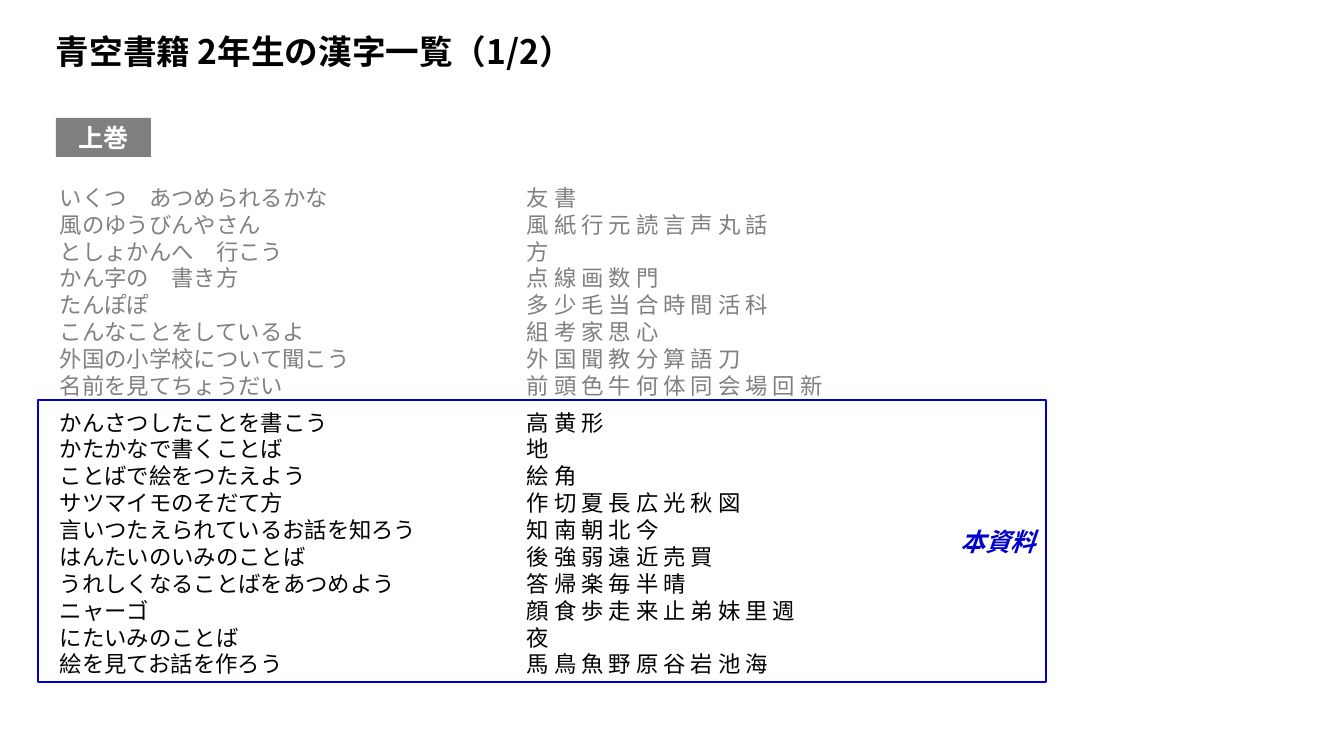
from pptx import Presentation
from pptx.dml.color import RGBColor
from pptx.enum.shapes import MSO_SHAPE as SHAPE
from pptx.enum.text import MSO_ANCHOR as ANCHOR, PP_ALIGN as ALIGN
from pptx.oxml.ns import qn
from pptx.util import Pt
from lxml.etree import SubElement

FONT = "Noto Sans CJK JP"
BLACK = RGBColor(0x00, 0x00, 0x00)
WHITE = RGBColor(0xFF, 0xFF, 0xFF)
GRAY = RGBColor(0x80, 0x80, 0x80)
BLUE = RGBColor(0x00, 0x00, 0xCC)

EARLIER_UNITS = [
    ("いくつ　あつめられるかな", "友書"),
    ("風のゆうびんやさん", "風紙行元読言声丸話"),
    ("としょかんへ　行こう", "方"),
    ("かん字の　書き方", "点線画数門"),
    ("たんぽぽ", "多少毛当合時間活科"),
    ("こんなことをしているよ", "組考家思心"),
    ("外国の小学校について聞こう", "外国聞教分算語刀"),
    ("名前を見てちょうだい", "前頭色牛何体同会場回新"),
]
CURRENT_UNITS = [
    ("かんさつしたことを書こう", "高黄形"),
    ("かたかなで書くことば", "地"),
    ("ことばで絵をつたえよう", "絵角"),
    ("サツマイモのそだて方", "作切夏長広光秋図"),
    ("言いつたえられているお話を知ろう", "知南朝北今"),
    ("はんたいのいみのことば", "後強弱遠近売買"),
    ("うれしくなることばをあつめよう", "答帰楽毎半晴"),
    ("ニャーゴ", "顔食歩走来止弟妹里週"),
    ("にたいみのことば", "夜"),
    ("絵を見てお話を作ろう", "馬鳥魚野原谷岩池海"),
]


def px(n):
    return round(n * 914400 / 100.8)


def add_run(p, text, color, **formats):
    r = p.add_run()
    r.text = text
    r.font.color.rgb = color
    for name, value in {"name": FONT, **formats}.items():
        setattr(r.font, name, value)
    SubElement(r.font._element, qn("a:ea"), typeface=FONT)


def add_text_box(slide, box, top_inset):
    tf = slide.shapes.add_textbox(*map(px, box)).text_frame
    tf.word_wrap = True
    tf.margin_top = px(top_inset)
    return tf


def add_box(slide, box, text, color, align, fill=None, line=None, italic=False):
    sp = slide.shapes.add_shape(SHAPE.RECTANGLE, *map(px, box))
    sp.shadow.inherit = False
    if fill is None:
        sp.fill.background()
    else:
        sp.fill.solid()
        sp.fill.fore_color.rgb = fill
    if line is None:
        sp.line.fill.background()
    else:
        sp.line.color.rgb = line
        sp.line.width = Pt(1)
    tf = sp.text_frame
    tf.vertical_anchor = ANCHOR.MIDDLE
    p = tf.paragraphs[0]
    p.alignment = align
    add_run(p, text, color, size=Pt(18), bold=True, italic=italic)


def add_title(slide, box):
    p = add_text_box(slide, box, 1).paragraphs[0]
    add_run(p, "青空書籍 2年生の漢字一覧（1/2）", BLACK, size=Pt(24), bold=True)


def add_kanji_list(slide, box, kanji_column):
    tf = add_text_box(slide, box, 38)
    p = tf.paragraphs[0]
    for units, color in ((EARLIER_UNITS, GRAY), (CURRENT_UNITS, BLACK)):
        for i, (unit, kanji) in enumerate(units):
            if p is None:
                p = tf.add_paragraph()
            p.line_spacing = Pt(19.2)
            # The second group stands slightly apart
            if i == 0 and units is CURRENT_UNITS:
                p.space_before = Pt(7)
            # Tab stop for the kanji column
            tabs = SubElement(p._p.get_or_add_pPr(), qn("a:tabLst"))
            SubElement(tabs, qn("a:tab"), pos=str(px(kanji_column)), algn="l")
            add_run(p, f"{unit}\t{' '.join(kanji)}", color, size=Pt(16))
            p = None


def main():
    prs = Presentation()
    prs.slide_width, prs.slide_height = px(1344), px(756)
    slide = prs.slides.add_slide(prs.slide_layouts[6])

    # Unit list, then the title and volume label
    add_kanji_list(slide, (50, 146, 964, 556), 467)
    add_title(slide, (46, 30, 977, 51))
    add_box(slide, (56, 118, 95, 39), "上巻", WHITE, ALIGN.CENTER, fill=GRAY)

    # Frame around the units covered here
    add_box(slide, (38, 400, 1008, 282), "本資料", BLUE, ALIGN.RIGHT,
            line=BLUE, italic=True)
    prs.save("out.pptx")


if __name__ == "__main__":
    main()
